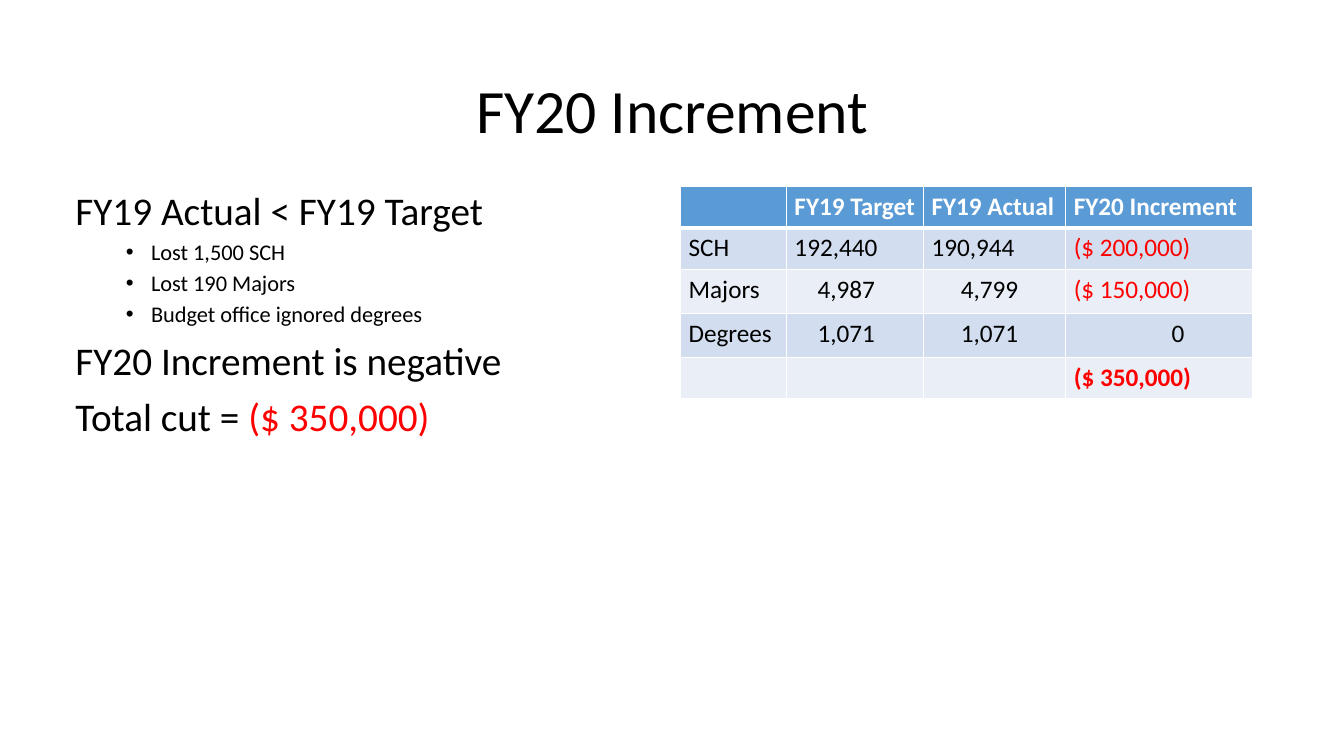
from lxml.etree import SubElement
from pptx import Presentation
from pptx.dml.color import RGBColor
from pptx.enum.text import MSO_ANCHOR, PP_ALIGN
from pptx.oxml.ns import qn
from pptx.util import Emu, Pt

FONT = "Calibri"
BLACK, WHITE, RED = "000000", "FFFFFF", "FF0000"
HEADER_FILL, BAND_FILLS = "5B9BD5", ("D2DEEF", "EAEFF7")

BODY = [
    (0, [("FY19 Actual < FY19 Target", BLACK)]),
    (1, [("Lost 1,500 SCH", BLACK)]),
    (1, [("Lost 190 Majors", BLACK)]),
    (1, [("Budget office ignored degrees", BLACK)]),
    (0, [("FY20 Increment is negative", BLACK)]),
    (0, [("Total cut = ", BLACK), ("($ 350,000)", RED)]),
]
ROWS = [
    ["", "FY19 Target", "FY19 Actual", "FY20 Increment"],
    ["SCH", "192,440", "190,944", "($ 200,000)"],
    ["Majors", "4,987", "4,799", "($ 150,000)"],
    ["Degrees", "1,071", "1,071", "0"],
    ["", "", "", "($ 350,000)"],
]
COLUMN_WIDTHS = [105, 136, 141, 185]
ROW_HEIGHTS = [41, 41, 44, 44, 41]
SHORT_NUMBER_INDENTS = [0, 23, 29, 97]


def px(length):
    """Turn px, 100 to the inch, into EMU."""
    return Emu(length * 9144)


def color(value):
    """Turn a hex string into a colour."""
    return RGBColor.from_string(value)


def add_run(paragraph, text, size, value, bold=False):
    """Add one styled run to a paragraph."""
    run = paragraph.add_run()
    run.text = text
    run.font.name = FONT
    run.font.size = Pt(size)
    run.font.bold = bold
    run.font.color.rgb = color(value)


def add_frame(slide, box):
    """Add a wrapping text box and return its text frame."""
    frame = slide.shapes.add_textbox(*map(px, box)).text_frame
    frame.word_wrap = True
    return frame


def add_title(slide, box):
    """Place the centred slide title in the box."""
    frame = add_frame(slide, box)
    frame.vertical_anchor = MSO_ANCHOR.MIDDLE
    paragraph = frame.paragraphs[0]
    paragraph.alignment = PP_ALIGN.CENTER
    paragraph.line_spacing = 0.9
    add_run(paragraph, "FY20 Increment", 44, BLACK)


def add_body(slide, box):
    """Place the statements and their bullets in the box."""
    frame = add_frame(slide, box)
    for index, (level, runs) in enumerate(BODY):
        paragraph = frame.add_paragraph() if index else frame.paragraphs[0]
        paragraph.level = level
        paragraph.line_spacing = 0.9
        paragraph.space_before = Pt(5 if level else 10)
        if level:
            properties = paragraph._p.get_or_add_pPr()
            properties.set("marL", str(px(75)))
            properties.set("indent", str(px(-25)))
            SubElement(properties, qn("a:buFont"), typeface="Arial")
            SubElement(properties, qn("a:buChar"), char="•")
        for text, value in runs:
            add_run(paragraph, text, 16 if level else 28, value)


def set_borders(cell, top, bottom):
    """Draw white cell borders with the given top and bottom widths in points."""
    properties = cell._tc.get_or_add_tcPr()
    for side, width in (("L", 1), ("R", 1), ("T", top), ("B", bottom)):
        line = SubElement(properties, qn(f"a:ln{side}"), w=str(Pt(width)))
        fill = SubElement(line, qn("a:solidFill"))
        SubElement(fill, qn("a:srgbClr"), val=WHITE)


def fill_cell(cell, row, column, text):
    """Style one table cell and write its text."""
    set_borders(cell, 3 if row == 1 else 1, 1 if row else 3)
    cell.fill.solid()
    cell.fill.fore_color.rgb = color(BAND_FILLS[(row - 1) % 2] if row else HEADER_FILL)
    is_short_number = row > 0 and text[:1].isdigit() and len(text) < 7
    cell.margin_left = px(8 + (SHORT_NUMBER_INDENTS[column] if is_short_number else 0))
    cell.margin_right = px(8)
    cell.margin_top = cell.margin_bottom = px(5)
    if text:
        value = RED if text.startswith("(") else BLACK if row else WHITE
        add_run(cell.text_frame.paragraphs[0], text, 18, value, row in (0, len(ROWS) - 1))


def add_increment_table(slide, box):
    """Place the table of targets, actuals and increments in the box."""
    table = slide.shapes.add_table(len(ROWS), len(COLUMN_WIDTHS), *map(px, box)).table
    for column, width in zip(table.columns, COLUMN_WIDTHS):
        column.width = px(width)
    for row, height in zip(table.rows, ROW_HEIGHTS):
        row.height = px(height)
    for row, texts in enumerate(ROWS):
        for column, text in enumerate(texts):
            fill_cell(table.cell(row, column), row, column, text)


def main():
    """Build the slide and save it."""
    presentation = Presentation()
    presentation.slide_width, presentation.slide_height = px(1333), px(750)
    slide = presentation.slides.add_slide(presentation.slide_layouts[6])
    add_title(slide, (92, 40, 1150, 145))
    add_increment_table(slide, (675, 185, sum(COLUMN_WIDTHS), sum(ROW_HEIGHTS)))
    add_body(slide, (65, 185, 567, 476))
    presentation.save("out.pptx")


if __name__ == "__main__":
    main()
